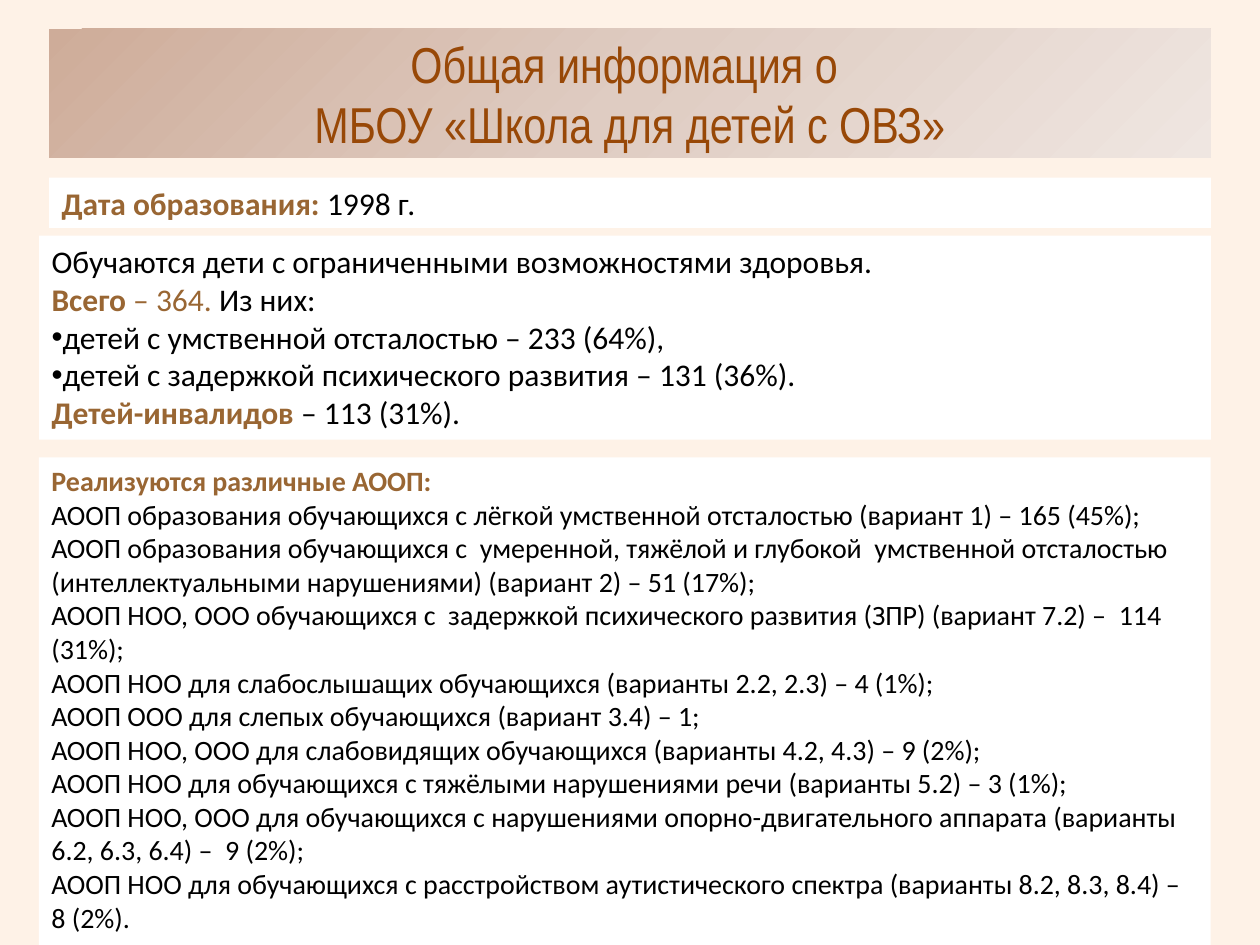
from copy import deepcopy
from dataclasses import dataclass

from lxml.etree import SubElement
from pptx import Presentation
from pptx.dml.color import RGBColor
from pptx.enum.text import MSO_ANCHOR, MSO_AUTO_SIZE, PP_ALIGN
from pptx.oxml.ns import qn
from pptx.util import Inches, Pt


@dataclass(frozen=True)
class Theme:
    background: str = "FEF2E7"
    panel: str = "FFFFFF"
    text: str = "000000"
    accent: str = "996633"
    title: str = "984807"
    title_gradient: tuple = ((0, "CEAC99"), (0.5, "DFCCC2"), (1, "EFE6E1"))
    title_font: str = "Arial Narrow"
    body_font: str = "Calibri"
    title_size: float = 28.8
    body_size: float = 18
    programme_size: float = 16


def add_text(paragraph, text, *, font, size, color, bold=False):
    run = paragraph.add_run()
    run.text = text
    run.font.name = font
    run.font.size = Pt(size)
    run.font.bold = bold
    run.font.color.rgb = RGBColor.from_string(color)


def set_bullet(paragraph, character=None):
    """Set a bullet without a hanging indent, or turn bullets off."""
    properties = paragraph._p.get_or_add_pPr()
    properties.set("marL", "0")
    properties.set("indent", "0")
    if character:
        SubElement(properties, qn("a:buFont")).set("typeface", "Arial")
        SubElement(properties, qn("a:buChar")).set("char", character)
    else:
        SubElement(properties, qn("a:buNone"))


class SlideBuilder:
    def __init__(self, slide, theme):
        self.slide = slide
        self.theme = theme
        fill = slide.background.fill
        fill.solid()
        fill.fore_color.rgb = RGBColor.from_string(theme.background)

    def place(self, shape, left, top, width, height):
        shape.left, shape.top = Inches(left), Inches(top)
        shape.width, shape.height = Inches(width), Inches(height)

    def title(self, lines, *box):
        theme = self.theme
        shape = self.slide.shapes.title
        self.place(shape, *box)
        self.fill_gradient(shape, theme.title_gradient)
        frame = shape.text_frame
        frame.auto_size = MSO_AUTO_SIZE.NONE
        frame.vertical_anchor = MSO_ANCHOR.MIDDLE
        paragraph = frame.paragraphs[0]
        paragraph.alignment = PP_ALIGN.CENTER
        for index, line in enumerate(lines):
            if index:
                paragraph.add_line_break()
            add_text(paragraph, line, font=theme.title_font,
                     size=theme.title_size, color=theme.title)

    def fill_gradient(self, shape, stops):
        shape.fill.gradient()
        shape.fill.gradient_angle = 315
        first_stop = shape._element.spPr.find(".//" + qn("a:gs"))
        first_stop.addnext(deepcopy(first_stop))
        for stop, (position, color) in zip(shape.fill.gradient_stops, stops):
            stop.position = position
            stop.color.rgb = RGBColor.from_string(color)

    def text_panel(self, paragraphs, *box, size):
        shape = self.slide.shapes.add_textbox(*map(Inches, box))
        self.fill_panel(shape, paragraphs, size)

    def body_panel(self, paragraphs, *box, size):
        shape = self.slide.placeholders[1]
        self.place(shape, *box)
        self.fill_panel(shape, paragraphs, size)

    def fill_panel(self, shape, paragraphs, size):
        """Write paragraphs of (text, style) runs; a leading • makes a bullet."""
        theme = self.theme
        styles = {
            "plain": {"color": theme.text},
            "accent": {"color": theme.accent},
            "strong": {"color": theme.accent, "bold": True},
        }
        shape.fill.solid()
        shape.fill.fore_color.rgb = RGBColor.from_string(theme.panel)
        frame = shape.text_frame
        frame.word_wrap = True
        frame.auto_size = MSO_AUTO_SIZE.NONE
        frame.vertical_anchor = MSO_ANCHOR.TOP
        for index, runs in enumerate(paragraphs):
            paragraph = frame.add_paragraph() if index else frame.paragraphs[0]
            paragraph.space_before = Pt(0)
            is_bullet = runs[0][0].startswith("•")
            set_bullet(paragraph, "•" if is_bullet else None)
            for text, style in runs:
                add_text(paragraph, text.removeprefix("•"),
                         font=theme.body_font, size=size, **styles[style])


FOUNDED = [[("Дата образования: ", "strong"), ("1998 г.", "plain")]]

PUPILS = [
    [("Обучаются дети с ограниченными возможностями здоровья.", "plain")],
    [("Всего", "strong"), (" – 364. ", "accent"), ("Из них:", "plain")],
    [("•детей с умственной отсталостью – 233 (64%),", "plain")],
    [("•детей с задержкой психического развития – 131 (36%).", "plain")],
    [("Детей-инвалидов ", "strong"), ("– 113 (31%).", "plain")],
]

PROGRAMMES = [
    "АООП образования обучающихся с лёгкой умственной отсталостью (вариант 1) – 165 (45%);",
    "АООП образования обучающихся с  умеренной, тяжёлой и глубокой  умственной отсталостью "
    "(интеллектуальными нарушениями) (вариант 2) – 51 (17%);",
    "АООП НОО, ООО обучающихся с  задержкой психического развития (ЗПР) (вариант 7.2) –  114 (31%);",
    "АООП НОО для слабослышащих обучающихся (варианты 2.2, 2.3) – 4 (1%);",
    "АООП ООО для слепых обучающихся (вариант 3.4) – 1;",
    "АООП НОО, ООО для слабовидящих обучающихся (варианты 4.2, 4.3) – 9 (2%);",
    "АООП НОО для обучающихся с тяжёлыми нарушениями речи (варианты 5.2) – 3 (1%);",
    "АООП НОО, ООО для обучающихся с нарушениями опорно-двигательного аппарата "
    "(варианты 6.2, 6.3, 6.4) –  9 (2%);",
    "АООП НОО для обучающихся с расстройством аутистического спектра "
    "(варианты 8.2, 8.3, 8.4) – 8 (2%).",
]


def main():
    presentation = Presentation()
    presentation.slide_width, presentation.slide_height = Inches(10), Inches(7.5)
    slide = presentation.slides.add_slide(presentation.slide_layouts[1])
    theme = Theme()
    builder = SlideBuilder(slide, theme)

    builder.title(["Общая информация о ", "МБОУ «Школа для детей с ОВЗ»"],
                  0.39, 0.23, 9.22, 1.02)
    builder.text_panel(FOUNDED, 0.39, 1.41, 9.22, 0.4, size=theme.body_size)
    builder.body_panel(PUPILS, 0.31, 1.87, 9.3, 1.62, size=theme.body_size)
    programme_list = [[("Реализуются различные АООП:", "strong")]]
    programme_list += [[(programme, "plain")] for programme in PROGRAMMES]
    builder.text_panel(programme_list, 0.31, 3.63, 9.3, 3.87,
                       size=theme.programme_size)
    presentation.save("out.pptx")


if __name__ == "__main__":
    main()
